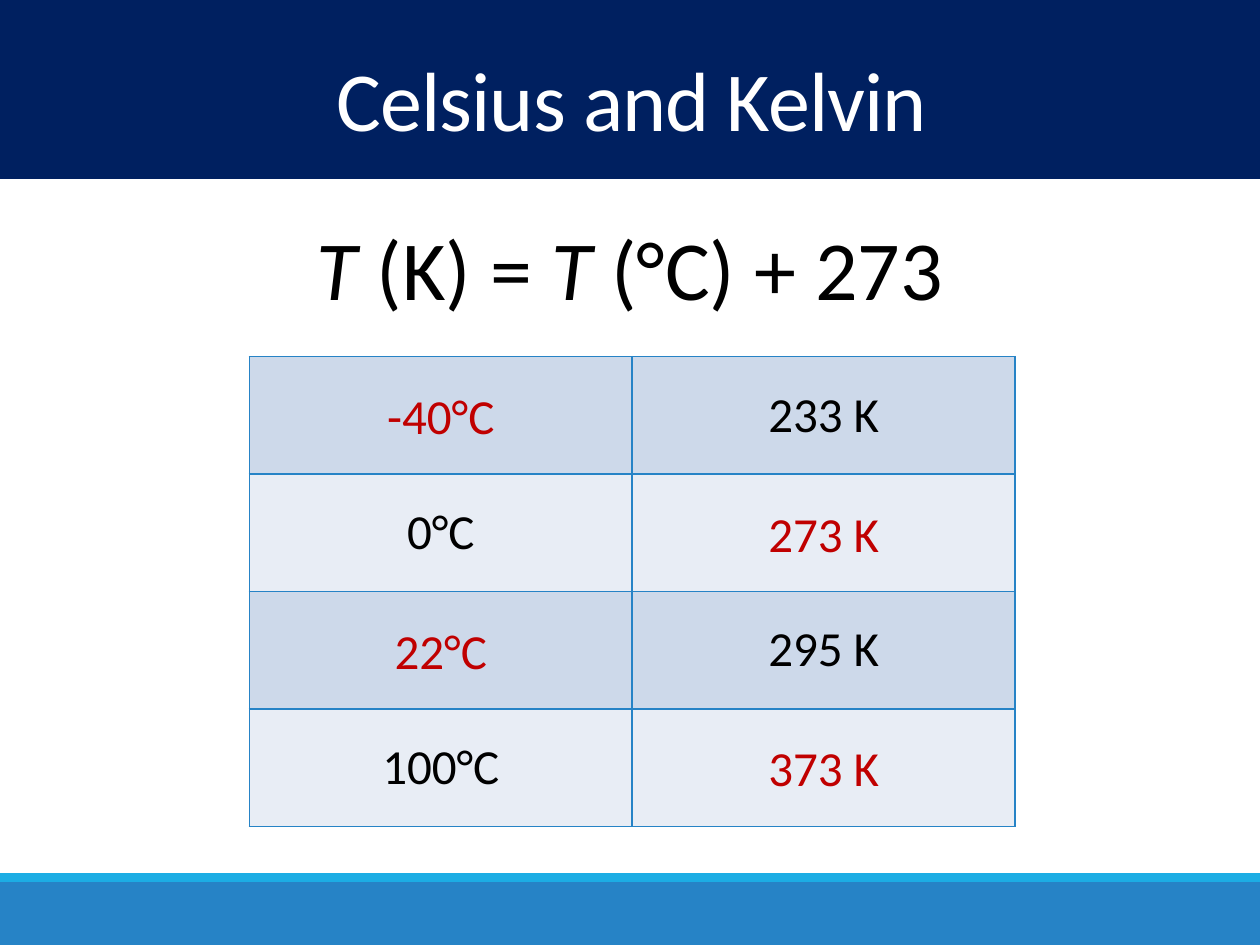
import pptx
import pptx.util
import pptx.oxml
import pptx.oxml.ns
import pptx.dml.color
import pptx.enum.text
import pptx.enum.shapes
from dataclasses import dataclass

Pt = pptx.util.Pt
Color = pptx.dml.color.RGBColor.from_string
Anchor = pptx.enum.text.MSO_ANCHOR


@dataclass
class Theme:
    font: str = "Calibri"
    navy: str = "002060"
    blue: str = "2683C6"
    sky: str = "1CADE4"
    white: str = "FFFFFF"
    black: str = "000000"
    red: str = "C00000"
    bands: tuple = ("CDD9EA", "E8EDF5")
    head: int = 48
    body: int = 28


theme = Theme()


def write(frame, *parts, size=theme.body, color=theme.black, anchor=Anchor.TOP, line=None, track=None):
    frame.word_wrap = True
    frame.vertical_anchor = anchor
    para = frame.paragraphs[0]
    para.alignment = pptx.enum.text.PP_ALIGN.CENTER
    if line:
        para.line_spacing = line
    for text, slant in parts:
        run = para.add_run()
        run.text = text
        run.font.name = theme.font
        run.font.size = Pt(size)
        run.font.italic = slant
        run.font.color.rgb = Color(color)
        if track:
            run.font._element.set("spc", str(track))


def border(cell):
    props = cell._tc.get_or_add_tcPr()
    for side in ("lnL", "lnR", "lnT", "lnB"):
        props.append(pptx.oxml.parse_xml(
            f'<a:{side} {pptx.oxml.ns.nsdecls("a")} w="{Pt(1)}"><a:solidFill>'
            f'<a:srgbClr val="{theme.blue}"/></a:solidFill></a:{side}>'))


deck = pptx.Presentation()
deck.slide_width, deck.slide_height = Pt(720), Pt(540)
slide = deck.slides.add_slide(deck.slide_layouts[5])
shapes = slide.shapes

for top, height, color in ((504, 36, theme.blue), (499, 5, theme.sky), (0, 102.3, theme.navy)):
    bar = shapes.add_shape(pptx.enum.shapes.MSO_SHAPE.RECTANGLE, 0, Pt(top), Pt(720), Pt(height))
    bar.shadow.inherit = False
    bar.fill.solid()
    bar.fill.fore_color.rgb = Color(color)
    bar.line.fill.background()

title = shapes.title
shapes.element.append(title.element)
title.left, title.top, title.width, title.height = Pt(2), Pt(30.2), Pt(718), Pt(60.5)
write(title.text_frame, ("Celsius and Kelvin", False), size=theme.head, color=theme.white,
      anchor=Anchor.MIDDLE, line=0.85, track=-50)

rule = shapes.add_textbox(Pt(16), Pt(120.2), Pt(688), Pt(65.5))
write(rule.text_frame, ("T ", True), ("(K) = ", False), ("T ", True), ("(°C) + 273", False),
      size=theme.head)

rows = (("-40°C", "233 K"), ("0°C", "273 K"), ("22°C", "295 K"), ("100°C", "373 K"))
left, top, wide, high = 142.5, 203.8, 218.8, 67.1
table = shapes.add_table(4, 2, Pt(left), Pt(top), Pt(2 * wide), Pt(4 * high)).table
table.first_row = table.horz_banding = False
for col in table.columns:
    col.width = Pt(wide)

for r, row in enumerate(rows):
    table.rows[r].height = Pt(high)
    for c, text in enumerate(row):
        cell = table.cell(r, c)
        border(cell)
        cell.fill.solid()
        cell.fill.fore_color.rgb = Color(theme.bands[r % 2])
        if r % 2 == c:
            box = shapes.add_textbox(Pt(left + c * wide + (wide - 112.3) / 2),
                                     Pt(top + r * high + 13), Pt(112.3), Pt(41.2))
            write(box.text_frame, (text, False), color=theme.red)
        else:
            write(cell.text_frame, (text, False))
            cell.vertical_anchor = Anchor.MIDDLE

deck.save("out.pptx")
